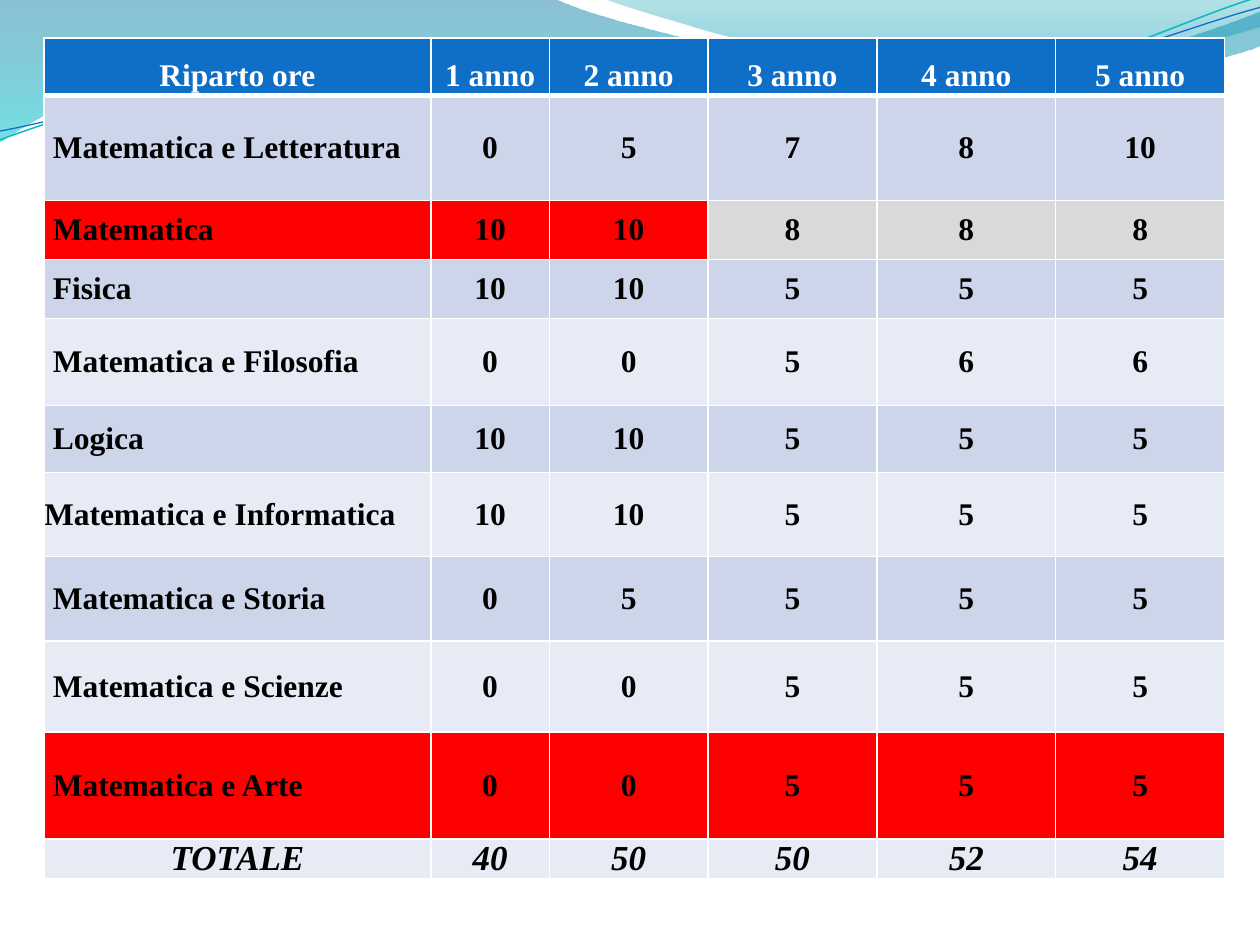
from math import cos, radians, sin

from lxml.etree import SubElement
from pptx import Presentation
from pptx.dml.color import RGBColor as RGB
from pptx.enum.text import MSO_ANCHOR as Anchor, PP_ALIGN as Align
from pptx.oxml.ns import qn
from pptx.util import Inches, Pt

COLORS = {
    "white": "FFFFFF", "ink": "000000", "header": "0F6FC6",
    "band": "CCD5EA", "pale": "E7EBF5", "red": "FF0000", "gray": "D9D9D9",
    "deep_blue": "0074A1", "cyan": "00C6CF", "teal": "00A1A9",
    "sky": "008BBF", "aqua_line": "0AB8BF",
}
HEADINGS = ["Riparto ore"] + [f"{year} anno" for year in range(1, 6)]
SUBJECTS = [
    ("Matematica e Letteratura", (0, 5, 7, 8, 10), 0.83),
    ("Matematica", (10, 10, 8, 8, 8), 0.47),
    ("Fisica", (10, 10, 5, 5, 5), 0.47),
    ("Matematica e Filosofia", (0, 0, 5, 6, 6), 0.69),
    ("Logica", (10, 10, 5, 5, 5), 0.53),
    ("Matematica e Informatica", (10, 10, 5, 5, 5), 0.67),
    ("Matematica e Storia", (0, 5, 5, 5, 5), 0.67),
    ("Matematica e Scienze", (0, 0, 5, 5, 5), 0.72),
    ("Matematica e Arte", (0, 0, 5, 5, 5), 0.85),
]
TOTALS = ["TOTALE", 40, 50, 50, 52, 54]
COLUMN_WIDTHS = [3.07, 0.94, 1.26, 1.34, 1.42, 1.34]
HEADER_HEIGHT, TOTAL_HEIGHT = 0.46, 0.32
TILT = 2.7


def rgb(color):
    return RGB.from_string(COLORS[color])


def write_text(frame, text, color="ink", size=18, italic=False, align=Align.CENTER, spacing=None):
    paragraph = frame.paragraphs[0]
    paragraph.alignment = align
    if spacing:
        paragraph.line_spacing = spacing
    run = paragraph.add_run()
    run.text = str(text)
    font = run.font
    font.name, font.size, font.bold, font.italic = "Times New Roman", Pt(size), True, italic
    font.color.rgb = rgb(color)


def turn(point, center):
    angle = radians(TILT)
    x, y = point[0] - center[0], point[1] - center[1]
    return (center[0] + x * cos(angle) - y * sin(angle),
            center[1] + x * sin(angle) + y * cos(angle))


class Deck:
    def __init__(self, slide):
        self.slide = slide
        self.inset = Inches(0.07)

    def outline(self, start, segments, close):
        builder = self.slide.shapes.build_freeform(*map(Inches, start), scale=1.0)
        builder.add_line_segments(
            [(Inches(x), Inches(y)) for segment in segments for x, y in segment], close=close)
        shape = builder.convert_to_shape()
        shape.shadow.inherit = False
        lines = iter(list(shape.element.spPr.iter(qn("a:lnTo"))))
        for segment in segments:
            parts = [next(lines) for _ in segment]
            if len(parts) == 3:
                parts[0].addprevious(bend := SubElement(parts[0].getparent(), qn("a:cubicBezTo")))
                for part in parts:
                    bend.append(part[0])
                    part.getparent().remove(part)
        return shape

    def wave(self, start, segments, stops):
        shape = self.outline(start, segments, True)
        shape.line.fill.background()
        shape.fill.gradient()
        shape.fill.gradient_angle = 270
        for stop, (position, color, _) in zip(shape.fill.gradient_stops, stops):
            stop.position = position
            stop.color.rgb = rgb(color)
        tints = shape.element.spPr.iter(qn("a:srgbClr"))
        for tint, (_, _, opacity) in zip(tints, stops):
            SubElement(tint, qn("a:alpha"), val=str(opacity * 1000))

    def curve(self, start, segments, center, color, width):
        level = [[turn(point, center) for point in segment] for segment in segments]
        shape = self.outline(turn(start, center), level, False)
        shape.rotation = 360 - TILT
        shape.fill.background()
        shape.line.color.rgb = rgb(color)
        shape.line.width = Pt(width)

    def table(self, left, top, widths, heights):
        table = self.slide.shapes.add_table(
            len(heights), len(widths), Inches(left), Inches(top),
            Inches(sum(widths)), Inches(sum(heights))).table
        table.horz_banding = False
        for column, width in zip(table.columns, widths):
            column.width = Inches(width)
        for row, height in zip(table.rows, heights):
            row.height = Inches(height)
        return table

    def cell(self, cell, text, fill, inset=None, borders=None, **text_format):
        cell.vertical_anchor = Anchor.MIDDLE
        cell.margin_left = cell.margin_right = self.inset if inset is None else inset
        cell.margin_top = cell.margin_bottom = 0
        properties = cell._tc.get_or_add_tcPr()
        for side, width in (borders or {}).items():
            border = SubElement(properties, qn(f"a:ln{side}"), w=str(Pt(width)))
            SubElement(SubElement(border, qn("a:solidFill")), qn("a:srgbClr"), val=COLORS["white"])
        cell.fill.solid()
        cell.fill.fore_color.rgb = rgb(fill)
        write_text(cell.text_frame, text, **text_format)


def subject_fill(subject, row, column):
    if subject == "Matematica e Arte":
        return "red"
    if subject == "Matematica":
        return "red" if column < 3 else "gray"
    return "band" if row % 2 else "pale"


def draw_waves(deck):
    deck.wave((0, 0), [
        [(4.4, -0.01)],
        [(4.76, 0.17), (6.64, 0.63), (7.58, 0.63)],
        [(8.53, 0.63), (9.58, 0.26), (10, 0.09)], [(10.01, 0.36)],
        [(9.83, 0.44), (8.7, 0.76), (7.46, 0.75)],
        [(6.22, 0.75), (3.82, 0.28), (2.57, 0.34)],
        [(1.29, 0.36), (0.46, 0.83), (-0.01, 1.13)],
    ], [(0, "deep_blue", 45), (1, "cyan", 55)])
    deck.wave((4.79, -0.01), [
        [(5.09, 0.11), (6.82, 0.62), (7.69, 0.65)],
        [(8.56, 0.69), (9.61, 0.32), (10, 0.21)], [(10, 0)],
    ], [(0, "teal", 30), (0.8, "sky", 45)])
    deck.curve((0, 1.11), [
        [(0.48, 0.93), (1.58, 0.57), (2.77, 0.52)],
        [(3.95, 0.47), (5.93, 0.89), (7.13, 0.8)],
        [(8.33, 0.71), (9.38, 0.15), (9.98, -0.02)],
    ], (4.99, 0.58), "aqua_line", 0.85)
    deck.curve((0, 1.04), [
        [(0.47, 0.96), (1.64, 0.61), (2.83, 0.56)],
        [(4.03, 0.51), (5.97, 0.84), (7.17, 0.75)],
        [(8.36, 0.67), (9.41, 0.21), (10, 0.06)],
    ], (5, 0.59), "header", 0.75)


def draw_hours(deck):
    heights = [HEADER_HEIGHT, *(height for _, _, height in SUBJECTS), TOTAL_HEIGHT]
    hours = deck.table(0.35, 0.3, COLUMN_WIDTHS, heights)
    for column, heading in enumerate(HEADINGS):
        deck.cell(hours.cell(0, column), heading, "header",
                  borders={"L": 1, "R": 1, "T": 1, "B": 3}, color="white", spacing=1.5)
    for row, (subject, values, _) in enumerate(SUBJECTS, 1):
        for column, text in enumerate((subject, *values)):
            deck.cell(hours.cell(row, column), text, subject_fill(subject, row, column),
                      inset=0 if subject == "Matematica e Informatica" else None,
                      align=Align.CENTER if column else Align.LEFT)
    for column, total in enumerate(TOTALS):
        deck.cell(hours.cell(len(heights) - 1, column), total, "pale", size=20, italic=True)


def main():
    presentation = Presentation()
    presentation.slide_width, presentation.slide_height = Inches(10), Inches(7.5)
    deck = Deck(presentation.slides.add_slide(presentation.slide_layouts[6]))
    draw_waves(deck)
    draw_hours(deck)
    presentation.save("out.pptx")


if __name__ == "__main__":
    main()
